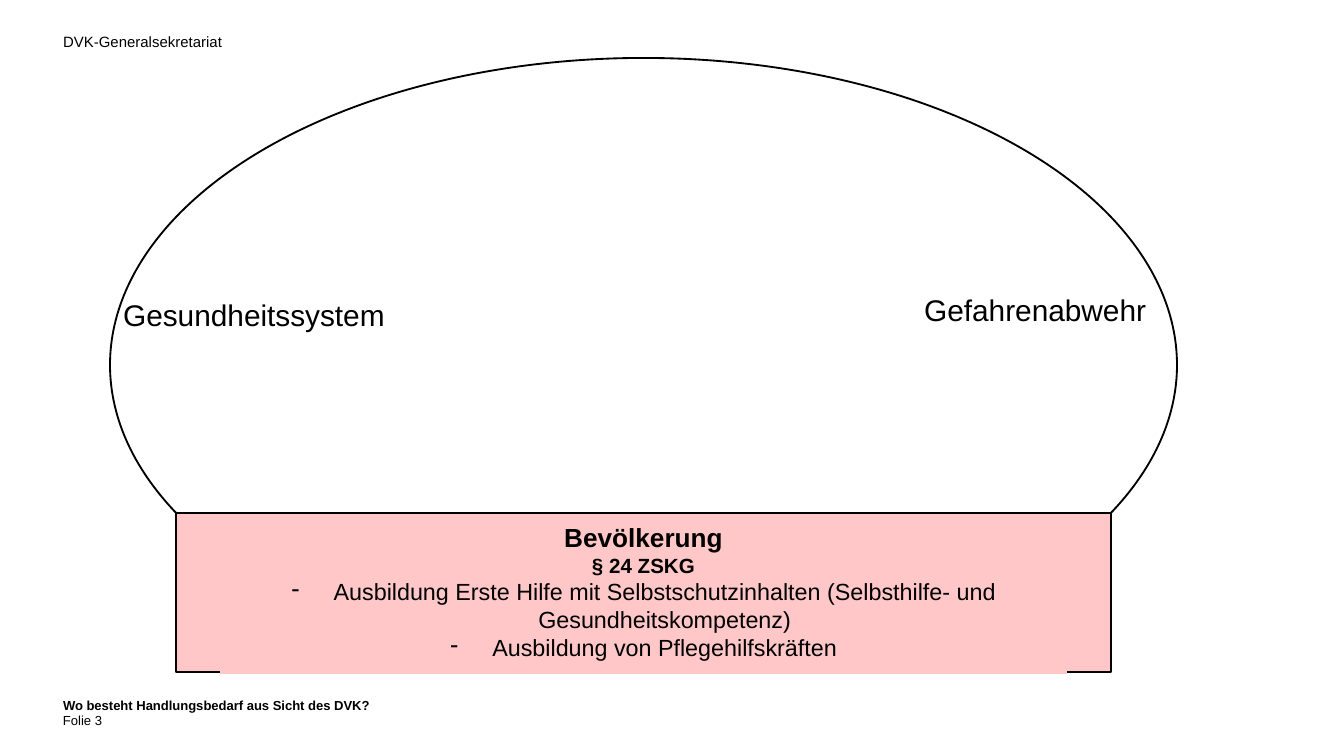
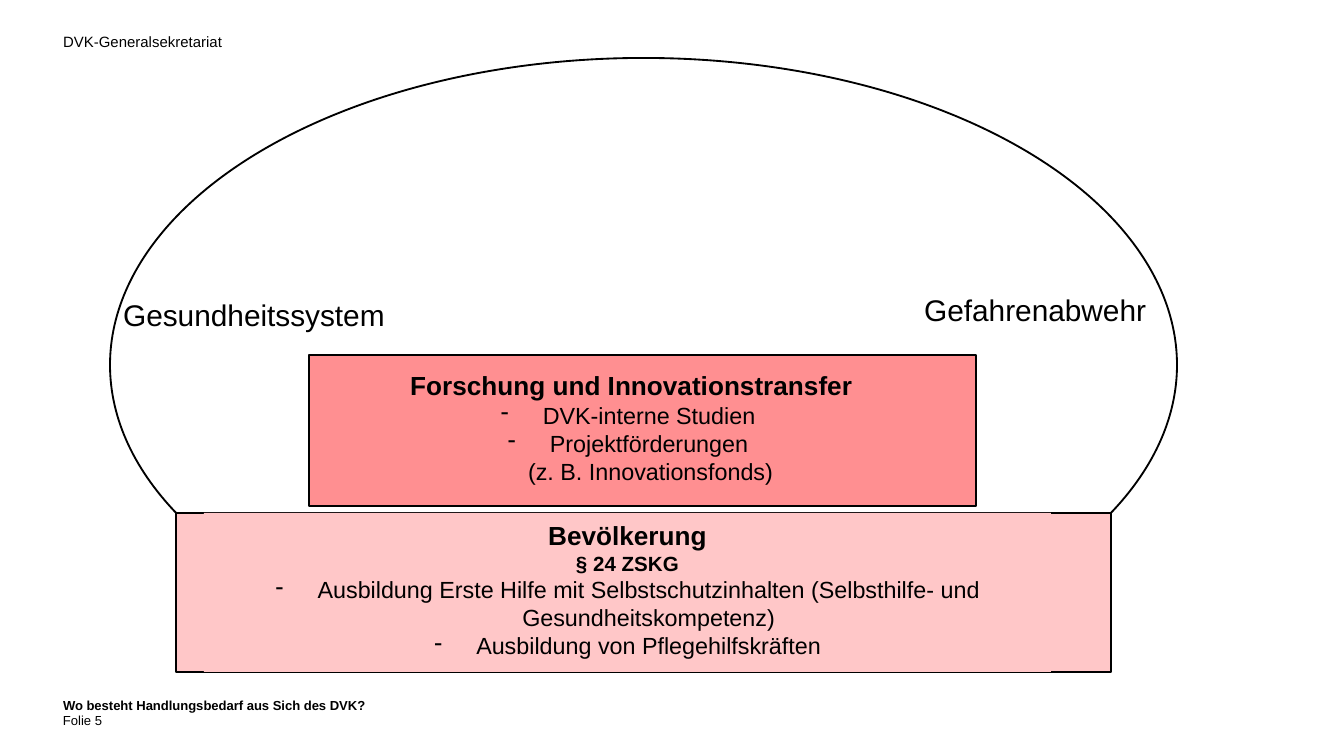
from lxml import etree
from pptx import Presentation
from pptx.dml.color import RGBColor
from pptx.enum.shapes import MSO_SHAPE
from pptx.enum.text import MSO_ANCHOR, PP_ALIGN
from pptx.oxml.ns import qn
from pptx.util import Pt

RECTANGLE = MSO_SHAPE.RECTANGLE
CONNECTOR_CIRCLE = MSO_SHAPE.FLOWCHART_CONNECTOR
TOP, BOTTOM = MSO_ANCHOR.TOP, MSO_ANCHOR.BOTTOM
LEFT, CENTER = PP_ALIGN.LEFT, PP_ALIGN.CENTER

BLACK = RGBColor(0x00, 0x00, 0x00)
PALE_RED = RGBColor(0xFF, 0xC7, 0xC8)
MEDIUM_RED = RGBColor(0xFF, 0x8F, 0x91)

FONT = "Arial"
EMU_PER_INCH = 914400
PX_PER_INCH = 134.4
BULLET_INDENT = 42

POPULATION = [
    {"text": "Bevölkerung", "size": 14, "bold": True},
    {"text": "§ 24 ZSKG", "size": 11, "bold": True},
    {"text": "Ausbildung Erste Hilfe mit Selbstschutzinhalten "
             "(Selbsthilfe- und Gesundheitskompetenz)", "size": 12.5, "bullet": True},
    {"text": "Ausbildung von Pflegehilfskräften", "size": 12.5, "bullet": True},
]
RESEARCH = [
    {"text": "Forschung und Innovationstransfer", "size": 14, "bold": True, "indent": 7},
    {"text": "DVK-interne Studien", "size": 12.5, "bullet": True},
    {"text": "Projektförderungen", "size": 12.5, "bullet": True},
    {"text": "(z. B. Innovationsfonds)", "size": 12.5, "indent": 45},
]


def emu(px):
    return round(px * EMU_PER_INCH / PX_PER_INCH)


def box(*lengths):
    return [emu(length) for length in lengths]


def indent_paragraph(paragraph, indent, bullet):
    properties = paragraph._p.get_or_add_pPr()
    if bullet:
        properties.set("marL", str(emu(BULLET_INDENT)))
        properties.set("indent", str(-emu(BULLET_INDENT)))
        etree.SubElement(properties, qn("a:buChar")).set("char", "-")
    elif indent:
        properties.set("marL", str(emu(indent)))


def write_paragraph(paragraph, text, size, bold=False, bullet=False, indent=0,
                    alignment=LEFT, spacing=None):
    paragraph.text = text
    paragraph.alignment = alignment
    if spacing:
        paragraph.line_spacing = Pt(spacing)
    indent_paragraph(paragraph, indent, bullet)
    font = paragraph.font
    font.name = FONT
    font.size = Pt(size)
    font.bold = bold
    font.color.rgb = BLACK


def add_label(slide, bounds, text, size):
    frame = slide.shapes.add_textbox(*box(*bounds)).text_frame
    frame.word_wrap = True
    write_paragraph(frame.paragraphs[0], text, size)


def add_small_print(slide, bounds, text, size=7, spacing=9, bold=False, anchor=TOP):
    frame = slide.shapes.add_textbox(*box(*bounds)).text_frame
    frame.word_wrap = True
    frame.vertical_anchor = anchor
    frame.margin_left = frame.margin_right = frame.margin_top = frame.margin_bottom = 0
    write_paragraph(frame.paragraphs[0], text, size, bold=bold, spacing=spacing)


def add_outline(slide, kind, bounds, fill=None, outlined=True):
    shape = slide.shapes.add_shape(kind, *box(*bounds))
    shape.shadow.inherit = False
    if fill is None:
        shape.fill.background()
    else:
        shape.fill.solid()
        shape.fill.fore_color.rgb = fill
    if outlined:
        shape.line.color.rgb = BLACK
        shape.line.width = Pt(1)
    else:
        shape.line.fill.background()
    return shape


def add_block(slide, frame_bounds, text_bounds, fill, entries):
    add_outline(slide, RECTANGLE, frame_bounds, fill)
    frame = add_outline(slide, RECTANGLE, text_bounds, fill, outlined=False).text_frame
    frame.word_wrap = True
    frame.vertical_anchor = TOP
    for index, entry in enumerate(entries):
        paragraph = frame.add_paragraph() if index else frame.paragraphs[0]
        write_paragraph(paragraph, alignment=CENTER, **entry)


def add_header_and_footer(slide, question, number):
    add_small_print(slide, (63, 711, 40, 17), "Folie", anchor=BOTTOM)
    add_small_print(slide, (63, 32, 241, 17), "DVK-Generalsekretariat", size=8, spacing=10)
    add_small_print(slide, (63, 696, 1218, 12), question, bold=True)
    add_small_print(slide, (95, 712, 302, 16), number, anchor=BOTTOM)


def add_dome(slide):
    add_outline(slide, CONNECTOR_CIRCLE, (110, 58, 1067, 614))
    add_label(slide, (110, 290, 300, 50), "Gesundheitssystem", 16)
    add_label(slide, (911, 285, 270, 50), "Gefahrenabwehr", 16)


def add_population(slide, text_left, text_top):
    add_block(slide, (176, 513, 935, 159), (text_left, text_top, 847, 159),
              PALE_RED, POPULATION)


def add_research(slide):
    add_block(slide, (309, 355, 667, 151), (386, 363, 484, 132), MEDIUM_RED, RESEARCH)


def main():
    presentation = Presentation()
    presentation.slide_width, presentation.slide_height = box(1344, 756)
    blank = presentation.slide_layouts[6]

    slide = presentation.slides.add_slide(blank)
    add_header_and_footer(slide, "Wo besteht Handlungsbedarf aus Sicht des DVK?", "3")
    add_dome(slide)
    add_population(slide, 220, 515)

    slide = presentation.slides.add_slide(blank)
    add_header_and_footer(slide, "Wo besteht Handlungsbedarf aus Sich des DVK?", "5")
    add_research(slide)
    add_dome(slide)
    add_population(slide, 204, 513)

    presentation.save("out.pptx")


if __name__ == "__main__":
    main()
